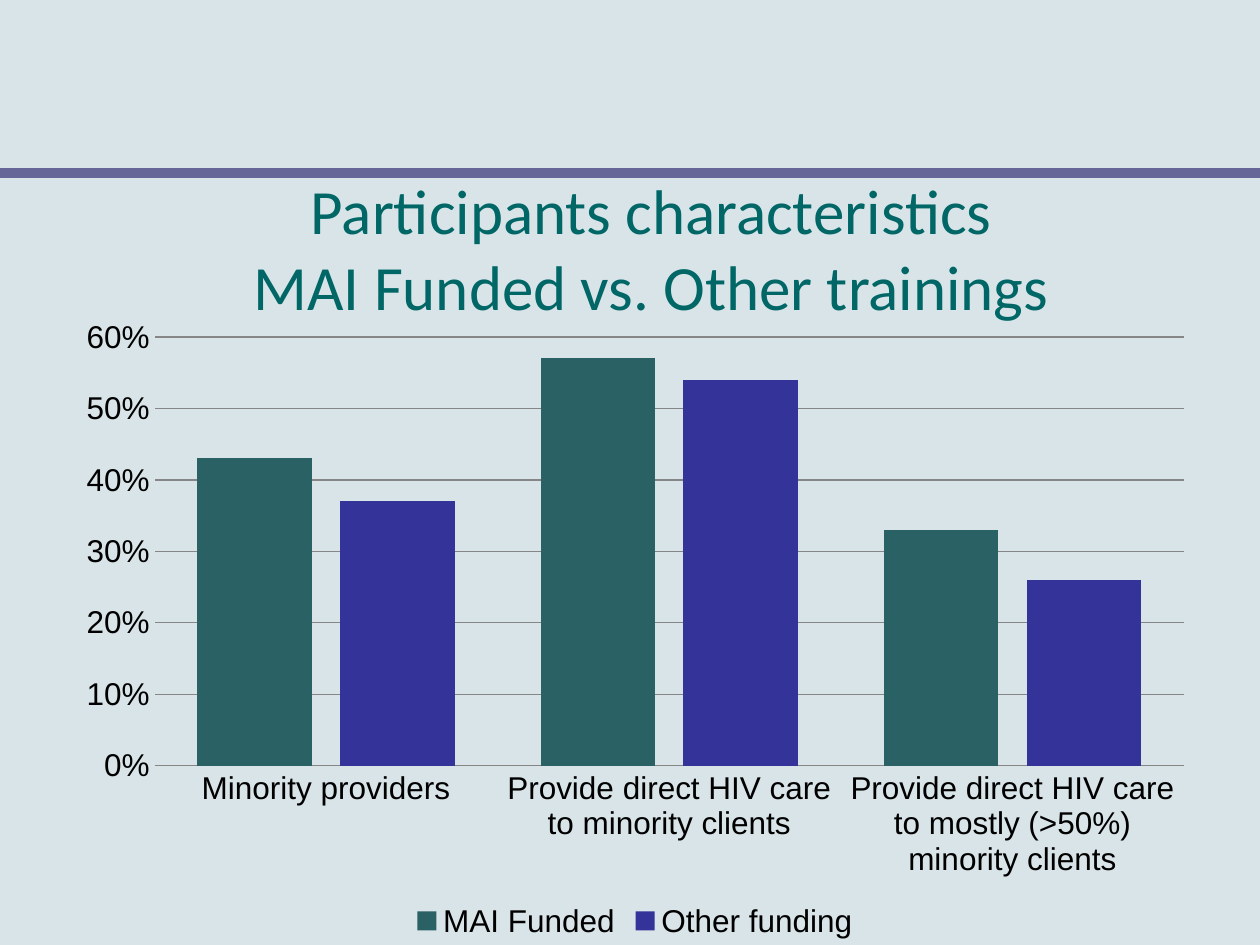
from lxml import etree
from pptx import Presentation
from pptx.chart.data import CategoryChartData
from pptx.dml.color import RGBColor
from pptx.enum import chart as ch, shapes, text
from pptx.oxml.ns import qn
from pptx.util import Cm, Pt

COLORS = {
    "background": "D8E4E8",
    "band": "666699",
    "title": "006666",
    "text": "000000",
    "grid": "868686",
    "MAI Funded": "296165",
    "Other funding": "333399",
}
RATES = {
    "MAI Funded": (0.43, 0.57, 0.33),
    "Other funding": (0.37, 0.54, 0.26),
}
PLOT_LAYOUT = {"x": 0.08, "y": 0.05, "w": 0.9, "h": 0.67}


def paint(fill, name):
    fill.solid()
    fill.fore_color.rgb = RGBColor.from_string(COLORS[name])


def style_font(font, name, size, color):
    for key, value in {"name": name, "size": Pt(size), "bold": False}.items():
        setattr(font, key, value)
    font.color.rgb = RGBColor.from_string(COLORS[color])


prs = Presentation()
prs.slide_width, prs.slide_height = Cm(25.4), Cm(19.05)
slide = prs.slides.add_slide(prs.slide_layouts[5])
paint(slide.background.fill, "background")

# Band across the slide
band = slide.shapes.add_shape(shapes.MSO_SHAPE.RECTANGLE, 0, Cm(3.39), prs.slide_width, Cm(0.2))
band.shadow.inherit = False
paint(band.fill, "band")
band.line.fill.background()

# Title
title = slide.shapes.title
title.left, title.top, title.width, title.height = Cm(1.7), Cm(3.39), Cm(22.86), Cm(3.18)
title.text_frame.text = "Participants characteristics\vMAI Funded vs. Other trainings"
title.text_frame.vertical_anchor = text.MSO_ANCHOR.MIDDLE
heading = title.text_frame.paragraphs[0]
heading.alignment = text.PP_ALIGN.CENTER
for run in heading.runs:
    style_font(run.font, "Calibri", 36, "title")

# Chart
rates = CategoryChartData(number_format="0%")
rates.categories = [
    "Minority providers",
    "Provide direct HIV care to minority clients",
    "Provide direct HIV care to mostly (>50%) minority clients",
]
for funding, shares in RATES.items():
    rates.add_series(funding, shares)
chart = slide.shapes.add_chart(
    ch.XL_CHART_TYPE.COLUMN_CLUSTERED, Cm(1.27), Cm(6.15), Cm(23.06), Cm(12.9), rates
).chart
style_font(chart.font, "Arial", 18, "text")
chart.has_title = False
chart.has_legend = True
chart.legend.position = ch.XL_LEGEND_POSITION.BOTTOM
chart.legend.include_in_layout = False

columns = chart.plots[0]
for key, value in {"gap_width": 75, "overlap": -25, "vary_by_categories": False}.items():
    setattr(columns, key, value)
for series in columns.series:
    paint(series.format.fill, series.name)

share_axis = chart.value_axis
for key, value in {"minimum_scale": 0, "maximum_scale": 0.6, "major_unit": 0.1}.items():
    setattr(share_axis, key, value)
share_axis.tick_labels.number_format = "0%"
share_axis.tick_labels.number_format_is_linked = False
share_axis.format.line.fill.background()
for axis in (chart.category_axis, share_axis):
    axis.major_tick_mark = axis.minor_tick_mark = ch.XL_TICK_MARK.NONE
for line in (share_axis.major_gridlines.format.line, chart.category_axis.format.line):
    line.width = Pt(0.75)
    paint(line.fill, "grid")

# Fixed inner plot area, as fractions of the chart
plot_area = chart.element.find(".//" + qn("c:plotArea"))
for old_layout in plot_area.findall(qn("c:layout")):
    plot_area.remove(old_layout)
layout = etree.Element(qn("c:layout"))
plot_area.insert(0, layout)
manual = etree.SubElement(layout, qn("c:manualLayout"))
settings = {"layoutTarget": "inner", "xMode": "edge", "yMode": "edge", **PLOT_LAYOUT}
for tag, value in settings.items():
    etree.SubElement(manual, qn(f"c:{tag}")).set("val", str(value))

prs.save("out.pptx")
